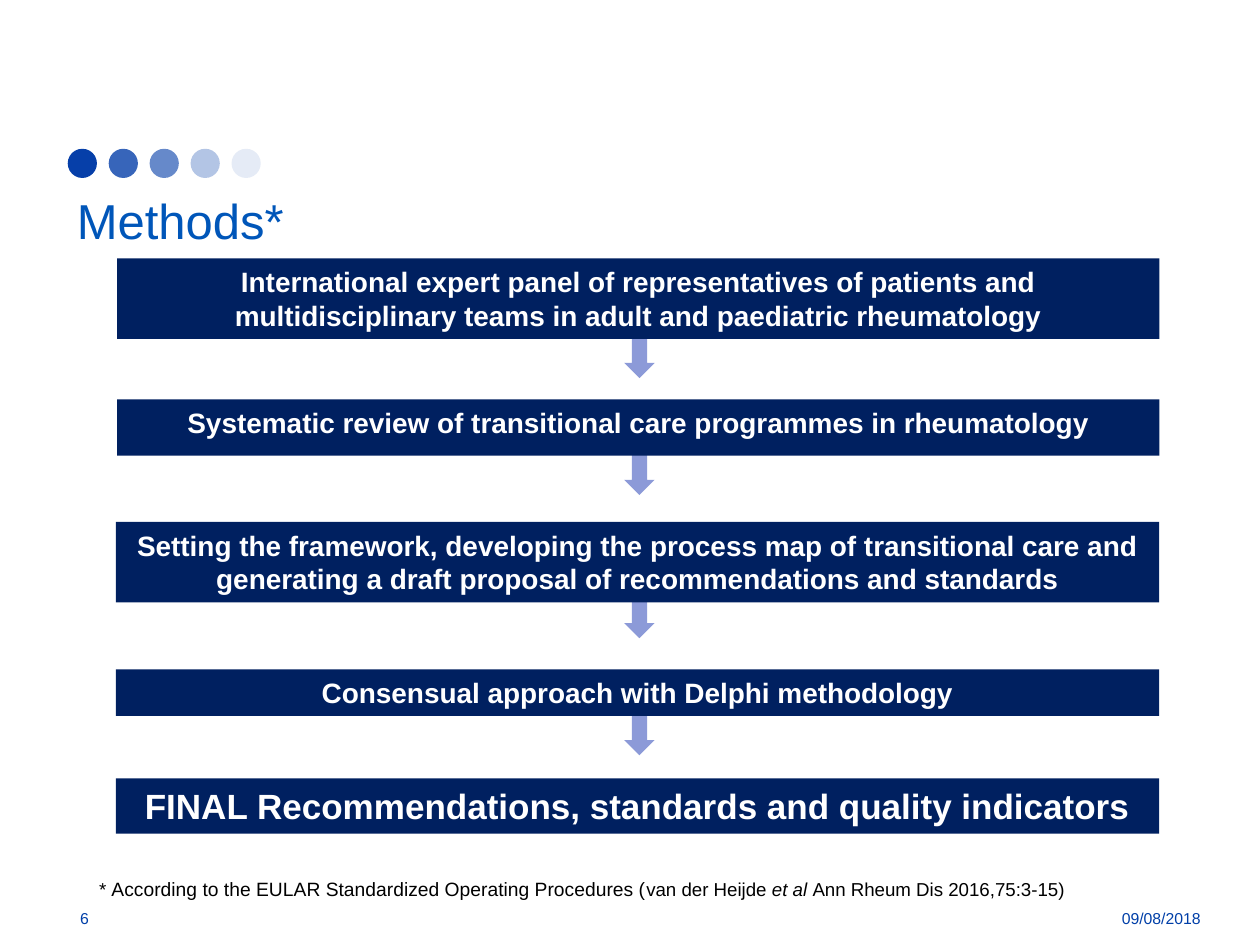
from dataclasses import dataclass

from lxml.etree import SubElement
from pptx import Presentation
from pptx.dml.color import RGBColor
from pptx.enum.shapes import MSO_SHAPE
from pptx.enum.text import MSO_ANCHOR, PP_ALIGN
from pptx.oxml.ns import qn
from pptx.util import Pt


@dataclass(frozen=True)
class Theme:
    """Colours, font and type sizes of the slide."""
    font: str = "Arial"
    dot: str = "063FA9"
    title: str = "0056B9"
    footer: str = "003FA8"
    bar: str = "002060"
    arrow: str = "8C9AD8"
    white: str = "FFFFFF"
    black: str = "000000"
    title_size: float = 28
    step_size: float = 16
    final_size: float = 20
    note_size: float = 10.7
    note_large: float = 11
    footer_size: float = 9


THEME = Theme()

DOT_ALPHAS = [100, 80, 61, 30, 10]

STEPS = [
    ("International expert panel of representatives of patients and "
     "multidisciplinary teams in adult and paediatric rheumatology",
     67, 147.6, 46, 23, THEME.step_size),
    ("Systematic review of transitional care programmes in rheumatology",
     67, 228.2, 32.2, 23, THEME.step_size),
    ("Setting the framework, developing the process map of transitional care and "
     "generating a draft proposal of recommendations and standards",
     66.2, 298.2, 46, 21, THEME.step_size),
    ("Consensual approach with Delphi methodology",
     66.2, 382.5, 26.6, 23, THEME.step_size),
    ("FINAL Recommendations, standards and quality indicators",
     66.2, 444.8, 31.6, 0, THEME.final_size),
]

NOTE = [
    ("* ", {"size": Pt(THEME.note_size)}),
    ("According to the EULAR Standardized Operating Procedures (",
     {"size": Pt(THEME.note_large)}),
    ("van der Heijde ", {"size": Pt(THEME.note_size)}),
    ("et al ", {"size": Pt(THEME.note_size), "italic": True}),
    ("Ann Rheum Dis 2016,75:3-15)", {"size": Pt(THEME.note_size)}),
]


def write(tf, runs, color, align=PP_ALIGN.LEFT, anchor=MSO_ANCHOR.TOP):
    """Fill a text frame with one paragraph of formatted runs."""
    tf.word_wrap = True
    tf.vertical_anchor = anchor
    p = tf.paragraphs[0]
    p.alignment = align
    for text, formats in runs:
        r = p.add_run()
        r.text = text
        r.font.color.rgb = RGBColor.from_string(color)
        for name, value in {"name": THEME.font, **formats}.items():
            setattr(r.font, name, value)


def add_text(s, box, runs, color, **layout):
    """Add a text box and return its text frame."""
    tf = s.shapes.add_textbox(*map(Pt, box)).text_frame
    write(tf, runs, color, **layout)
    return tf


def add_solid(s, kind, box, color):
    """Add a flat filled shape without outline."""
    sp = s.shapes.add_shape(kind, *map(Pt, box))
    sp.shadow.inherit = False
    sp.fill.solid()
    sp.fill.fore_color.rgb = RGBColor.from_string(color)
    sp.line.fill.background()
    return sp


def add_dots(s, left, top, size, pitch):
    """Place the row of fading dots."""
    for i, alpha in enumerate(DOT_ALPHAS):
        sp = add_solid(s, MSO_SHAPE.OVAL, (left + i * pitch, top, size, size), THEME.dot)
        if alpha < 100:
            clr = sp.element.spPr.find(qn("a:solidFill")).find(qn("a:srgbClr"))
            SubElement(clr, qn("a:alpha")).set("val", str(alpha * 1000))


def add_title(s, box):
    """Place the slide title."""
    tf = add_text(s, box, [("Methods*", {"size": Pt(THEME.title_size)})], THEME.title)
    tf.margin_top = Pt(6.7)


def add_flow(s, right, arrow_center, arrow_width):
    """Place the step bars with an arrow below each but the last."""
    for text, left, top, height, arrow, size in STEPS:
        if arrow:
            add_solid(s, MSO_SHAPE.DOWN_ARROW,
                      (arrow_center - arrow_width / 2, top + height - 0.5,
                       arrow_width, arrow), THEME.arrow)
        sp = add_solid(s, MSO_SHAPE.RECTANGLE,
                       (left, top, right - left, height), THEME.bar)
        write(sp.text_frame, [(text, {"size": Pt(size), "bold": True})],
              THEME.white, align=PP_ALIGN.CENTER)


def add_footer(s, left, right, top, height):
    """Place the page number and the date at the slide's foot."""
    for text, x, width, align in [("6", left, 69, PP_ALIGN.LEFT),
                                  ("09/08/2018", right - 96.5, 96.5, PP_ALIGN.RIGHT)]:
        add_text(s, (x, top, width, height), [(text, {"size": Pt(THEME.footer_size)})],
                 THEME.footer, align=align, anchor=MSO_ANCHOR.MIDDLE)


def main():
    """Build and save the slide."""
    prs = Presentation()
    prs.slide_width, prs.slide_height = Pt(720), Pt(540)
    s = prs.slides.add_slide(prs.slide_layouts[6])
    add_dots(s, 38.7, 85, 16.7, 23.4)
    add_title(s, (36.9, 102.2, 656, 49.7))
    add_flow(s, 662.5, 365.4, 17.4)
    add_text(s, (49.5, 497.5, 605, 21), NOTE, THEME.black)
    add_footer(s, 38.7, 693.2, 510.5, 28.8)
    prs.save("out.pptx")


if __name__ == "__main__":
    main()
